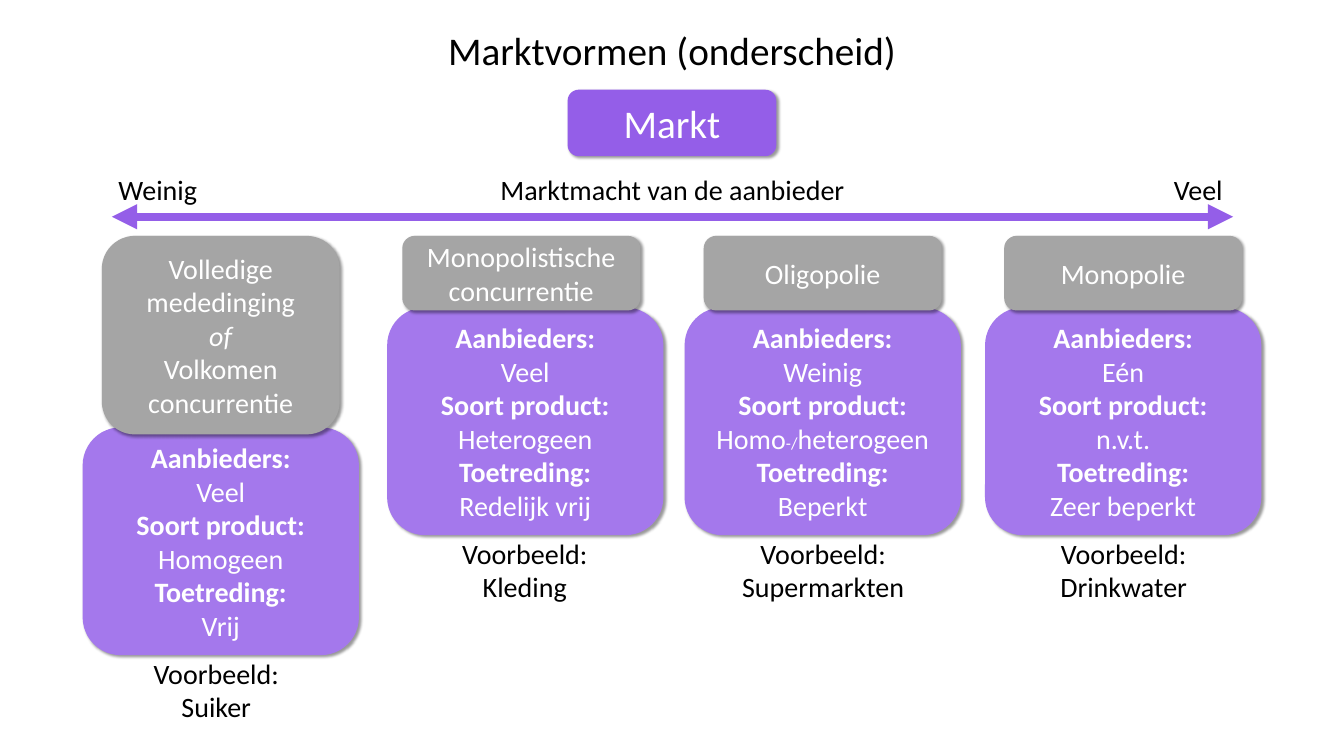
from dataclasses import dataclass
from lxml.etree import SubElement
from pptx import Presentation
from pptx.dml.color import RGBColor
from pptx.enum.shapes import MSO_CONNECTOR, MSO_SHAPE
from pptx.enum.text import MSO_ANCHOR, MSO_AUTO_SIZE, PP_ALIGN
from pptx.oxml.ns import qn
from pptx.util import Inches, Pt


@dataclass(frozen=True)
class Theme:
    font: str = "Calibri"
    black: RGBColor = RGBColor(0, 0, 0)
    white: RGBColor = RGBColor(255, 255, 255)
    purple: RGBColor = RGBColor(0x94, 0x5E, 0xE8)
    lilac: RGBColor = RGBColor(0xA4, 0x78, 0xEC)
    grey: RGBColor = RGBColor(0xA5, 0xA5, 0xA5)
    large: int = 28
    body: int = 20
    small: int = 12


T = Theme()


def write(tf, paragraphs, color, size=T.body):
    """Each paragraph is a list of runs: (text, optional font settings)."""
    tf.word_wrap = True
    for i, runs in enumerate(paragraphs):
        p = tf.add_paragraph() if i else tf.paragraphs[0]
        p.alignment = PP_ALIGN.CENTER
        for text, *settings in runs:
            r = p.add_run()
            r.text = text
            r.font.name, r.font.size, r.font.color.rgb = T.font, Pt(size), color
            for key, value in (settings[0] if settings else {}).items():
                setattr(r.font, key, value)


def add_card(box, fill, paragraphs, size=T.body):
    """Rounded box with a soft shadow and white text."""
    sp = s.shapes.add_shape(MSO_SHAPE.ROUNDED_RECTANGLE, *map(Inches, box))
    sp.fill.solid()
    sp.fill.fore_color.rgb = fill
    sp.line.fill.background()
    sp.shadow.inherit = False
    effects = sp._element.spPr.find(qn("a:effectLst"))
    shadow = SubElement(effects, qn("a:outerShdw"), blurRad=str(Pt(2)),
                        dist=str(Pt(2)), dir="2700000", algn="tl", rotWithShape="0")
    black = SubElement(shadow, qn("a:srgbClr"), val=str(T.black))
    SubElement(black, qn("a:alpha"), val="40000")
    sp.text_frame.vertical_anchor = MSO_ANCHOR.MIDDLE
    write(sp.text_frame, paragraphs, T.white, size)


prs = Presentation()
prs.slide_width, prs.slide_height = Inches(13.33), Inches(7.5)
s = prs.slides.add_slide(prs.slide_layouts[5])

# Title
title = s.shapes.title
title.left, title.top, title.width, title.height = map(Inches, (2.34, 0.21, 8.65, 0.57))
title.text_frame.auto_size = MSO_AUTO_SIZE.NONE
title.text_frame.vertical_anchor = MSO_ANCHOR.TOP
write(title.text_frame, [[("Marktvormen (onderscheid)",)]], T.black, T.large)

# Market forms: lefts of details, name and example; name height; name; answers; example
full_competition = [[("Volledige mededinging",)], [("of", {"italic": True})],
                    [("Volkomen concurrentie",)]]
mixed = [("Homo",), ("-/", {"size": Pt(T.small)}), ("heterogeen",)]
markets = [
    (0.82, 1.01, 1.11, 1.97, full_competition,
     [[("Veel",)], [("Homogeen",)], [("Vrij",)]], "Suiker"),
    (3.84, 3.99, 4.17, 0.74, [[("Monopolistische concurrentie",)]],
     [[("Veel",)], [("Heterogeen",)], [("Redelijk vrij",)]], "Kleding"),
    (6.79, 6.98, 7.13, 0.74, [[("Oligopolie",)]],
     [[("Weinig",)], mixed, [("Beperkt",)]], "Supermarkten"),
    (9.77, 9.96, 10.11, 0.74, [[("Monopolie",)]],
     [[("Eén",)], [("n.v.t.",)], [("Zeer beperkt",)]], "Drinkwater"),
]
questions = ["Aanbieders:", "Soort product:", "Toetreding:"]
name_top = 2.34
labels = [
    ((4.39, 1.66, 4.56, 0.44), ["Marktmacht van de aanbieder"]),
    ((11.25, 1.66, 1.27, 0.44), ["Veel"]),
    ((0.93, 1.66, 1.27, 0.44), ["Weinig"]),
]
for details_x, name_x, example_x, name_h, name, answers, example in markets:
    details_y = name_top + name_h - 0.03 - (0.04 if name_h > 1 else 0)
    details = []
    for question, answer in zip(questions, answers):
        details += [[(question, {"bold": True})], answer]
    add_card((details_x, details_y, 2.74, 2.26), T.lilac, details)
    add_card((name_x, name_top, 2.36, name_h), T.grey, name)
    labels.append(((example_x, details_y + 2.22, 2.07, 0.77), ["Voorbeeld:", example]))

# Market heading
add_card((5.63, 0.89, 2.07, 0.66), T.purple, [[("Markt",)]], T.large)

# Market power arrow
arrow = s.shapes.add_connector(MSO_CONNECTOR.STRAIGHT, Inches(1.11), Inches(2.15),
                               Inches(12.23), Inches(2.15))
arrow.line.color.rgb = T.purple
arrow.line.width = Pt(6)
for end in ("a:headEnd", "a:tailEnd"):
    SubElement(arrow.line._get_or_add_ln(), qn(end), type="triangle")
SubElement(arrow._element.spPr, qn("a:effectLst"))

# Scale labels and examples
for box, lines in labels:
    tf = s.shapes.add_textbox(*map(Inches, box)).text_frame
    tf.auto_size = MSO_AUTO_SIZE.SHAPE_TO_FIT_TEXT
    write(tf, [[(line,)] for line in lines], T.black)

prs.save("out.pptx")
